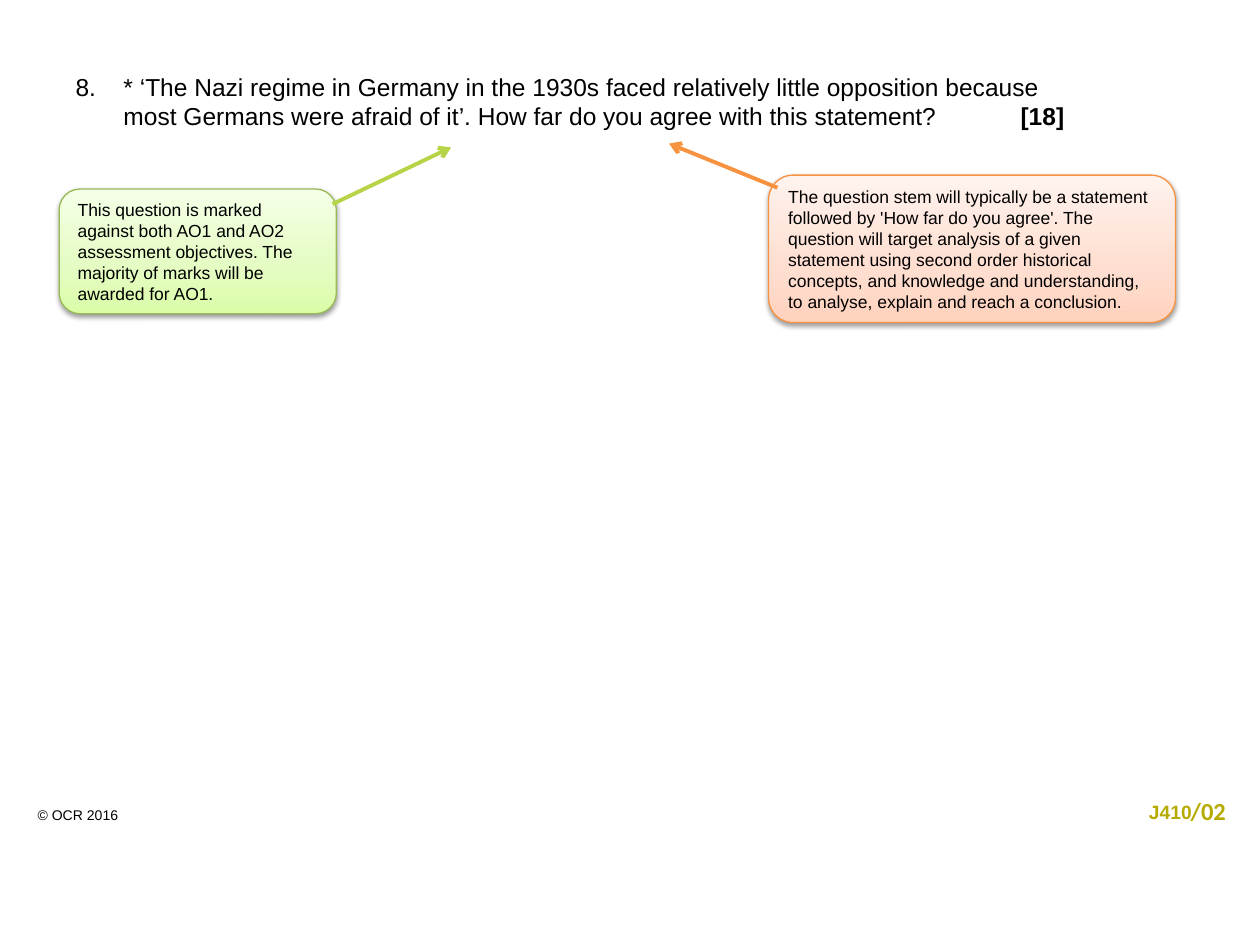
from dataclasses import dataclass

from lxml.etree import SubElement
from pptx import Presentation
from pptx.dml.color import RGBColor
from pptx.enum.shapes import MSO_CONNECTOR, MSO_SHAPE
from pptx.enum.text import MSO_ANCHOR, MSO_AUTO_SIZE, PP_ALIGN
from pptx.oxml import parse_xml
from pptx.oxml.ns import nsdecls, qn
from pptx.slide import Slide
from pptx.util import Inches, Pt


@dataclass
class Label:
    text: str
    box: tuple[float, float, float, float]
    size: float
    color: str
    font: str = "Arial"
    bold: bool = False


@dataclass
class Callout:
    text: str
    box: tuple[float, float, float, float]
    gradient: tuple[str, str, str]
    outline: str
    arrow_color: str
    arrow: tuple[float, float, float, float]


LABELS = [
    Label("© OCR 2016", (0.2, 6.35, 1.89, 0.24), 8, "000000"),
    Label("J410", (9.02, 6.3, 0.63, 0.29), 11, "B7AA00", bold=True),
    Label("/02", (9.35, 6.27, 0.55, 0.34), 14, "B7AA00", "Calibri", True),
]

CALLOUTS = [
    Callout(
        "The question stem will typically be a statement followed by 'How far do you agree'. "
        "The question will target analysis of a given statement using second order historical "
        "concepts, and knowledge and understanding, to analyse, explain and reach a conclusion.",
        (6.1, 1.39, 3.23, 1.17),
        ("FFD2BD", "FFDED0", "FFF2ED"),
        "F69240",
        "F69240",
        (6.17, 1.49, 5.31, 1.14),
    ),
    Callout(
        "This question is marked against both AO1 and AO2 assessment objectives. "
        "The majority of marks will be awarded for AO1.",
        (0.47, 1.5, 2.2, 0.99),
        ("DAFDA7", "E4FCC2", "F5FFE7"),
        "98B955",
        "B7D448",
        (2.64, 1.62, 3.58, 1.17),
    ),
]


def rgb(value: str) -> RGBColor:
    return RGBColor.from_string(value)


def apply(target, values: dict) -> None:
    for name, value in values.items():
        setattr(target, name, value)


def format_run(run, size: float, color: str, font: str = "Arial", bold: bool = False) -> None:
    apply(run.font, {"size": Pt(size), "name": font, "bold": bold})
    run.font.color.rgb = rgb(color)


def format_line(line, color: str, width: float) -> None:
    line.color.rgb = rgb(color)
    line.width = Pt(width)


def add_label(slide: Slide, label: Label) -> None:
    shape = slide.shapes.add_textbox(*map(Inches, label.box))
    apply(shape.text_frame, {"word_wrap": True, "auto_size": MSO_AUTO_SIZE.SHAPE_TO_FIT_TEXT})
    run = shape.text_frame.paragraphs[0].add_run()
    run.text = label.text
    format_run(run, label.size, label.color, label.font, label.bold)


def fill_gradient(shape, colors: tuple[str, str, str]) -> None:
    stops = "".join(
        f'<a:gs pos="{position * 1000}"><a:srgbClr val="{color}"/></a:gs>'
        for position, color in zip((0, 35, 100), colors)
    )
    shape._element.spPr.find(qn("a:prstGeom")).addnext(parse_xml(
        f'<a:gradFill {nsdecls("a")} rotWithShape="1"><a:gsLst>{stops}</a:gsLst>'
        '<a:lin ang="16200000" scaled="1"/></a:gradFill>'
    ))


def add_shadow(shape) -> None:
    shape.shadow.inherit = False
    shape._element.spPr.find(qn("a:effectLst")).append(parse_xml(
        f'<a:outerShdw {nsdecls("a")} blurRad="{Pt(3.1)}" dist="{Pt(1.6)}" dir="5400000" '
        'rotWithShape="0"><a:srgbClr val="000000"><a:alpha val="38000"/></a:srgbClr></a:outerShdw>'
    ))


def add_callout(slide: Slide, callout: Callout) -> None:
    shape = slide.shapes.add_shape(MSO_SHAPE.ROUNDED_RECTANGLE, *map(Inches, callout.box))
    fill_gradient(shape, callout.gradient)
    format_line(shape.line, callout.outline, 0.75)
    add_shadow(shape)
    apply(shape.text_frame, {"word_wrap": True, "vertical_anchor": MSO_ANCHOR.MIDDLE})
    paragraph = shape.text_frame.paragraphs[0]
    paragraph.alignment = PP_ALIGN.LEFT
    run = paragraph.add_run()
    run.text = callout.text
    format_run(run, 10, "000000")

    arrow = slide.shapes.add_connector(MSO_CONNECTOR.STRAIGHT, *map(Inches, callout.arrow))
    format_line(arrow.line, callout.arrow_color, 2.25)
    SubElement(arrow.line._get_or_add_ln(), qn("a:tailEnd"), type="arrow")
    SubElement(arrow._element.spPr, qn("a:effectLst"))


def fill_question(shape) -> None:
    left, top, width, height = map(Inches, (0.5, 0.52, 9.38, 5.75))
    apply(shape, {"left": left, "top": top, "width": width, "height": height})
    paragraph = shape.text_frame.paragraphs[0]
    properties = paragraph._p.get_or_add_pPr()
    properties.set("marL", str(Inches(0.38)))
    properties.set("indent", str(-Inches(0.38)))
    paragraph.space_before = Pt(0)
    SubElement(properties, qn("a:buFont"), typeface="Arial")
    SubElement(properties, qn("a:buAutoNum"), type="arabicPeriod", startAt="8")
    first = paragraph.add_run()
    first.text = "* ‘The Nazi regime in Germany in the 1930s faced relatively little opposition because "
    paragraph.add_line_break()
    second = paragraph.add_run()
    second.text = "most Germans were afraid of it’. How far do you agree with this statement? \t\t"
    marks = paragraph.add_run()
    marks.text = "[18]"
    for run in (first, second, marks):
        format_run(run, 14, "000000", bold=run is marks)


def main() -> None:
    presentation = Presentation()
    apply(presentation, {"slide_width": Inches(10), "slide_height": Inches(7.5)})
    slide = presentation.slides.add_slide(presentation.slide_layouts[1])
    title = slide.shapes.title._element
    title.getparent().remove(title)
    fill_question(slide.placeholders[1])
    for callout in CALLOUTS:
        add_callout(slide, callout)
    for label in LABELS:
        add_label(slide, label)
    presentation.save("out.pptx")


if __name__ == "__main__":
    main()
